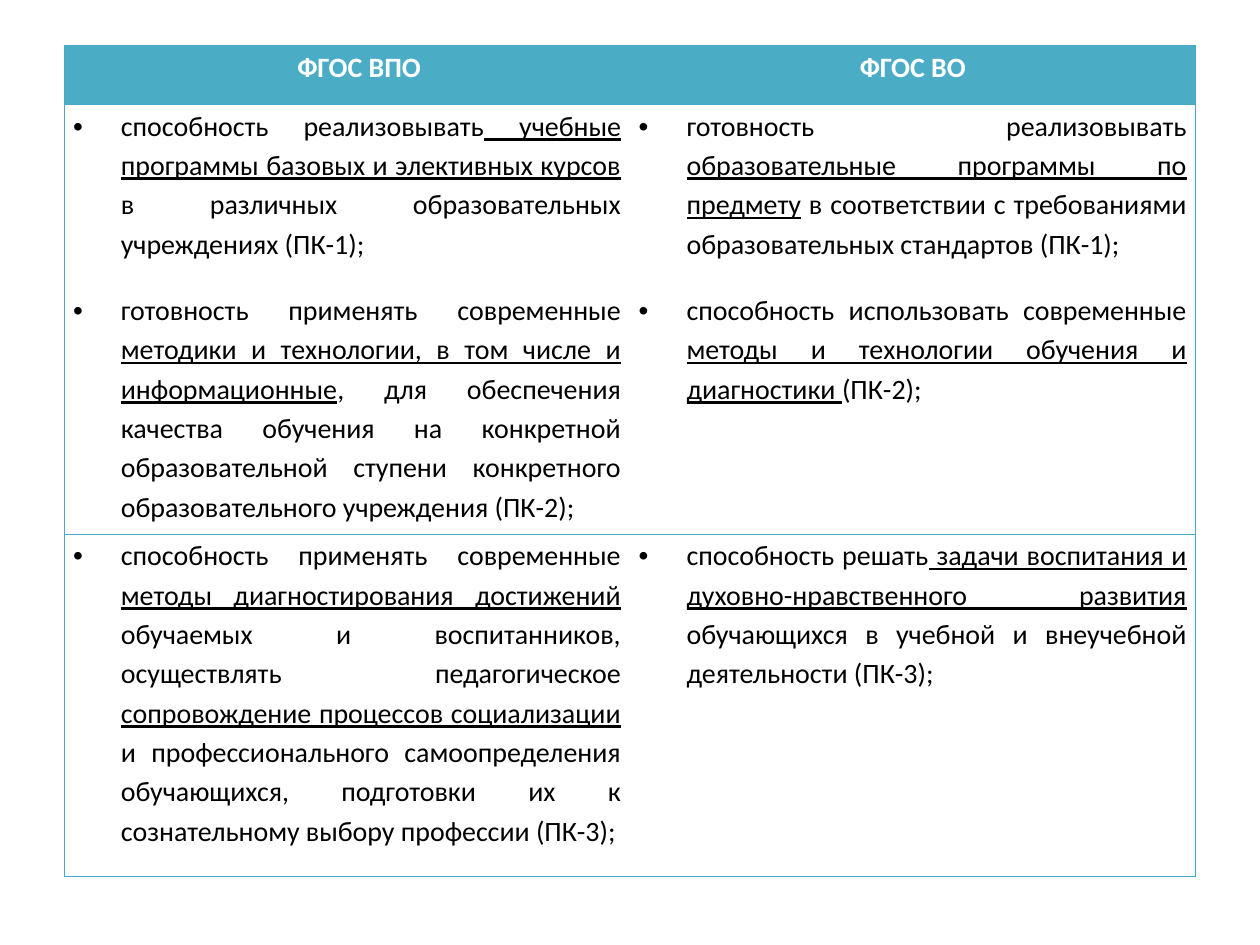
from dataclasses import dataclass

from lxml.etree import SubElement
from pptx import Presentation
from pptx.dml.color import RGBColor
from pptx.enum.text import PP_ALIGN
from pptx.oxml.ns import qn
from pptx.table import _Cell
from pptx.util import Inches, Pt

TEAL = "4BACC6"
BORDER = "46AAC5"
BLACK = "000000"
WHITE = "FFFFFF"
COLUMN_WIDTH = 4.49
ROW_HEIGHTS = (0.47, 3.41, 2.72)


@dataclass(frozen=True)
class Comparison:
    """Competences of both standards, with underlined words between underscores."""

    former: tuple[str, ...]
    current: tuple[str, ...]


HEADINGS = ("ФГОС ВПО", "ФГОС ВО")
COMPARISONS = (
    Comparison(
        former=(
            "способность реализовывать_ учебные программы базовых и элективных курсов_"
            " в различных образовательных учреждениях (ПК-1);",
            "готовность применять современные _методики и технологии, в том числе и"
            " информационные_, для обеспечения качества обучения на конкретной"
            " образовательной ступени конкретного образовательного учреждения (ПК-2);",
        ),
        current=(
            "готовность реализовывать _образовательные программы по предмету_"
            " в соответствии с требованиями образовательных стандартов (ПК-1);",
            "способность использовать современные _методы и технологии обучения"
            " и диагностики _(ПК-2);",
        ),
    ),
    Comparison(
        former=(
            "способность применять современные _методы диагностирования достижений_"
            " обучаемых и воспитанников, осуществлять педагогическое"
            " _сопровождение процессов социализации_ и профессионального"
            " самоопределения обучающихся, подготовки их к сознательному выбору"
            " профессии (ПК-3);",
        ),
        current=(
            "способность решать_ задачи воспитания и духовно-нравственного развития_"
            " обучающихся в учебной и внеучебной деятельности (ПК-3);",
        ),
    ),
)


def rgb(value: str) -> RGBColor:
    """Turn a hex string into a colour."""
    return RGBColor.from_string(value)


def write_paragraph(paragraph, text: str, *, color: str = BLACK, bold: bool = False,
                    alignment: PP_ALIGN = PP_ALIGN.JUSTIFY, margin: float = 0,
                    indent: float = 0, bullet: bool = False, before: float = 0) -> None:
    """Write text into a paragraph, underlining the words between underscores."""
    paragraph.alignment = alignment
    paragraph.line_spacing = 1.15
    paragraph.space_before = Pt(before)
    properties = paragraph._p.get_or_add_pPr()
    properties.set("marL", str(Inches(margin)))
    properties.set("indent", str(Inches(indent)))
    if bullet:
        SubElement(properties, qn("a:buFont"), typeface="Arial")
        SubElement(properties, qn("a:buChar"), char="•")
    for index, part in enumerate(text.split("_")):
        run = paragraph.add_run()
        run.text = part
        run.font.name = "Calibri"
        run.font.size = Pt(16)
        run.font.bold = bold
        run.font.underline = index % 2 == 1
        run.font.color.rgb = rgb(color)


def draw_borders(cell: _Cell, visible_sides: str) -> None:
    """Draw the borders on the given sides and clear the other ones."""
    properties = cell._tc.get_or_add_tcPr()
    for side in "LRTB":
        line = SubElement(properties, qn(f"a:ln{side}"), w=str(Pt(0.75)))
        if side in visible_sides:
            fill = SubElement(line, qn("a:solidFill"))
            SubElement(fill, qn("a:srgbClr"), val=BORDER)
        else:
            SubElement(line, qn("a:noFill"))


def format_cell(cell: _Cell, column: int, fill: str) -> None:
    """Set the margins, borders and fill of a cell."""
    cell.margin_left = cell.margin_right = Inches(0.07)
    cell.margin_top = cell.margin_bottom = Inches(0)
    draw_borders(cell, "LTB" if column == 0 else "RTB")
    cell.fill.solid()
    cell.fill.fore_color.rgb = rgb(fill)


def write_competences(cell: _Cell, competences: tuple[str, ...]) -> None:
    """Write competences as a bulleted list."""
    for index, competence in enumerate(competences):
        frame = cell.text_frame
        paragraph = frame.add_paragraph() if index else frame.paragraphs[0]
        write_paragraph(paragraph, competence, margin=0.38, indent=-0.38,
                        bullet=True, before=15.4 if index else 0)


def add_comparison_table(slide) -> None:
    """Add the table that compares both standards."""
    table = slide.shapes.add_table(
        len(ROW_HEIGHTS), len(HEADINGS), Inches(0.51), Inches(0.36),
        Inches(COLUMN_WIDTH * len(HEADINGS)), Inches(sum(ROW_HEIGHTS)),
    ).table
    table.horz_banding = False
    for row, height in zip(table.rows, ROW_HEIGHTS):
        row.height = Inches(height)
    for column, heading in enumerate(HEADINGS):
        table.columns[column].width = Inches(COLUMN_WIDTH)
        cell = table.cell(0, column)
        format_cell(cell, column, TEAL)
        margin, indent = (0.39, -0.2) if column == 0 else (0, 0)
        write_paragraph(cell.text_frame.paragraphs[0], heading, color=WHITE, bold=True,
                        alignment=PP_ALIGN.CENTER, margin=margin, indent=indent)
    for row, comparison in enumerate(COMPARISONS, start=1):
        for column, competences in enumerate((comparison.former, comparison.current)):
            cell = table.cell(row, column)
            format_cell(cell, column, WHITE)
            write_competences(cell, competences)


def main() -> None:
    """Build and save the presentation."""
    presentation = Presentation()
    presentation.slide_width = Inches(10)
    presentation.slide_height = Inches(7.5)
    slide = presentation.slides.add_slide(presentation.slide_layouts[6])
    add_comparison_table(slide)
    presentation.save("out.pptx")


if __name__ == "__main__":
    main()
